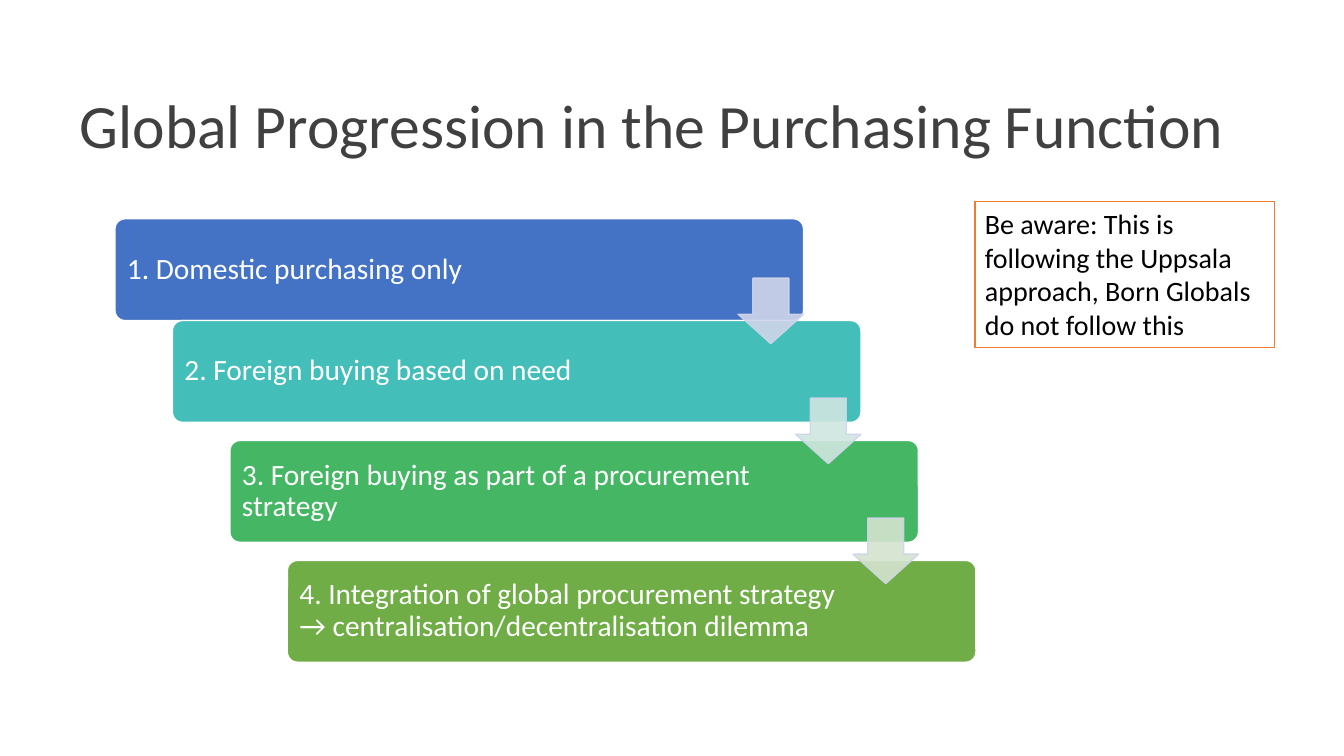
"""Builds the slide on the global progression of the purchasing function."""
from lxml.etree import SubElement
from pptx import Presentation
from pptx.dml.color import RGBColor
from pptx.enum.shapes import MSO_SHAPE as Preset
from pptx.enum.text import MSO_ANCHOR as Anchor, MSO_AUTO_SIZE as AutoSize, PP_ALIGN as Align
from pptx.oxml.ns import qn
from pptx.util import Emu, Pt

EMU_PER_PX = 9144
COLOURS = {
    "title": "404041", "text": "000000", "white": "FFFFFF", "note": "ED7D31",
    "blue": "4472C4", "teal": "43BEB9", "green": "45B664", "olive": "70AD47",
    "pale blue": "CFD5EA", "pale teal": "CFE6E0", "pale green": "D5E3CF",
}
STEPS = [
    ("1. Domestic purchasing only", "blue", 217),
    ("2. Foreign buying based on need", "teal", 318),
    ("3. Foreign buying as part of a procurement strategy", "green", 437),
    ("4. Integration of global procurement strategy\n"
     "→ centralisation/decentralisation dilemma", "olive", 556),
]
ARROWS = ["pale blue", "pale teal", "pale green"]
STAIR_X, ARROW_Y = 57, 119


def px(length):
    return Emu(length * EMU_PER_PX)


def colour(name):
    return RGBColor.from_string(COLOURS[name])


class SlideBuilder:
    def __init__(self, page, font):
        self.page = page
        self.font = font

    def set_text(self, shape, text, size, tint, spacing=1.0, **frame_format):
        frame = shape.text_frame
        settings = {"word_wrap": True, "auto_size": AutoSize.NONE,
                    "vertical_anchor": Anchor.MIDDLE} | frame_format
        for name, value in settings.items():
            setattr(frame, name, value)
        para = frame.paragraphs[0]
        para.text = text
        para.alignment = Align.LEFT
        para.line_spacing = spacing
        for span in para.runs:
            for name, value in {"name": self.font, "size": Pt(size)}.items():
                setattr(span.font, name, value)
            span.font.color.rgb = colour(tint)

    def title(self, text, left, top, width, height):
        title = self.page.shapes.title
        box = {"left": left, "top": top, "width": width, "height": height}
        for name, value in box.items():
            setattr(title, name, px(value))
        self.set_text(title, text, 44, "title", 0.9)

    def shape(self, preset, left, top, width, height, fill, line, adjustments=()):
        shape = self.page.shapes.add_shape(preset, *map(px, (left, top, width, height)))
        shape.shadow.inherit = False
        for index, value in enumerate(adjustments):
            shape.adjustments[index] = value
        if fill:
            shape.fill.solid()
            shape.fill.fore_color.rgb = colour(fill)
        else:
            shape.fill.background()
        shape.line.color.rgb = colour(line)
        shape.line.width = Pt(1)
        return shape

    def step(self, text, left, top, fill, margin_right):
        bar = self.shape(Preset.ROUNDED_RECTANGLE, left, top, 683, 101, fill, "white", [0.1])
        self.set_text(bar, text, 21, "white", 0.9,
                      margin_left=px(9), margin_right=px(margin_right))

    def arrow(self, left, top, fill):
        arrow = self.shape(Preset.DOWN_ARROW, left, top, 65, 65, fill, "pale blue", [0.55, 0.45])
        for tint in arrow._element.spPr.iter(qn("a:srgbClr")):
            SubElement(tint, qn("a:alpha"), val="90000")

    def note(self, text, left, top, width, height):
        note = self.shape(Preset.RECTANGLE, left, top, width, height, None, "note")
        self.set_text(note, text, 20, "text", vertical_anchor=Anchor.TOP,
                      auto_size=AutoSize.SHAPE_TO_FIT_TEXT)


def main():
    deck = Presentation()
    deck.slide_width, deck.slide_height = px(1333), px(750)
    builder = SlideBuilder(deck.slides.add_slide(deck.slide_layouts[5]), "Calibri")
    builder.title("Global Progression in the Purchasing Function", 69, 55, 1163, 145)
    for index, (text, fill, top) in enumerate(STEPS):
        margin_right = 132 if index else 120
        builder.step(text, 114 + index * STAIR_X, top, fill, margin_right)
    for index, fill in enumerate(ARROWS):
        builder.arrow(732 + index * STAIR_X, 276 + index * ARROW_Y, fill)
    builder.note("Be aware: This is following the Uppsala approach, "
                 "Born Globals do not follow this", 967, 200, 297, 145)
    deck.save("out.pptx")


if __name__ == "__main__":
    main()
